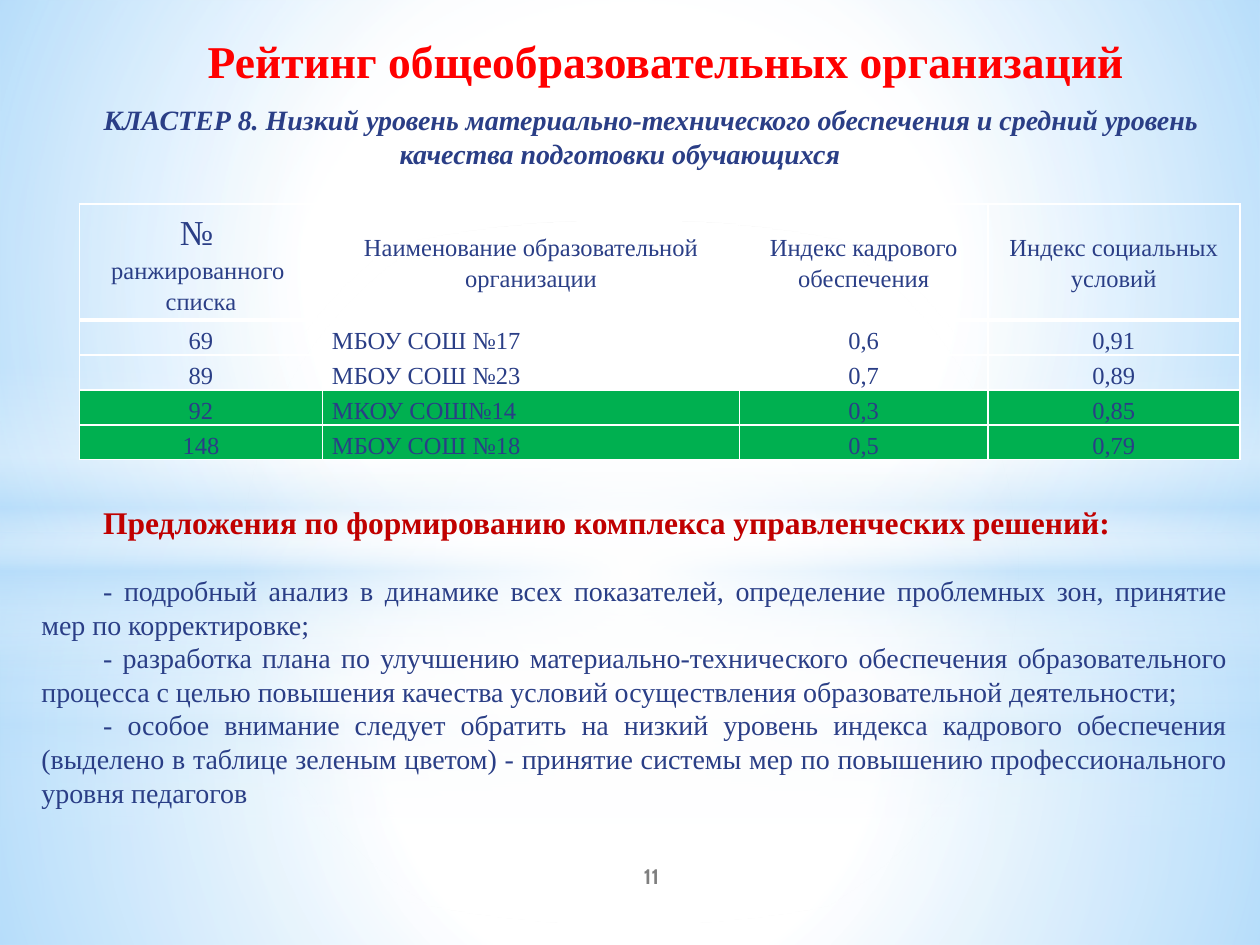
import pptx
import pptx.dml.color
import pptx.enum.shapes
import pptx.enum.text
import pptx.oxml
import pptx.oxml.ns
import pptx.util

ALIGN = pptx.enum.text.PP_ALIGN
ANCHOR = pptx.enum.text.MSO_ANCHOR
SHAPE = pptx.enum.shapes.MSO_SHAPE
SLIDE_WIDTH = pptx.util.Inches(10)
SLIDE_HEIGHT = pptx.util.Inches(7.5)
SERIF = "Times New Roman"
NAVY, WHITE, SKY, GREEN = "2A3E86", "FFFFFF", "B4DCFA", "00B050"
COLUMN_SHARES = [19.3, 33.1, 19.7, 20]
ROW_SHARES = [12.13] + [3.7] * 4
HEADINGS = [
    ["№ ", "ранжированного ", "списка"],
    ["Наименование образовательной организации"],
    ["Индекс кадрового обеспечения"],
    ["Индекс социальных условий"],
]
SCHOOLS = [
    ("69", "МБОУ СОШ №17", "0,6", "0,91"),
    ("89", "МБОУ СОШ №23", "0,7", "0,89"),
    ("92", "МКОУ СОШ№14", "0,3", "0,85"),
    ("148", "МБОУ СОШ №18", "0,5", "0,79"),
]
HIGHLIGHTED = {"92", "148"}
PROPOSALS = [
    "- подробный анализ в динамике всех показателей, определение проблемных зон, "
    "принятие мер по корректировке;",
    "- разработка плана по улучшению материально-технического обеспечения "
    "образовательного процесса с целью повышения качества условий осуществления "
    "образовательной деятельности; ",
    "- особое внимание следует обратить на низкий уровень индекса кадрового "
    "обеспечения (выделено в таблице зеленым цветом) - принятие системы мер по "
    "повышению профессионального уровня педагогов",
]


def color(value):
    return pptx.dml.color.RGBColor.from_string(value)


def across(share):
    return round(SLIDE_WIDTH * share / 100)


def down(share):
    return round(SLIDE_HEIGHT * share / 100)


def area(left, top, width, height):
    return across(left), down(top), across(width), down(height)


def drawing_xml(body):
    tag, rest = body[1:].split(" ", 1)
    return pptx.oxml.parse_xml(f"<{tag} {pptx.oxml.ns.nsdecls('a')} {rest}")


def write(frame, text, size=16, font=SERIF, fill=NAVY, bold=False, italic=False,
          align=ALIGN.LEFT, indent=0, spacing=None, before=None):
    paragraph = frame.add_paragraph() if frame.text else frame.paragraphs[0]
    if indent:
        properties = paragraph._p.get_or_add_pPr()
        properties.set("marL", "0")
        properties.set("indent", str(across(indent)))
    paragraph.alignment = align
    paragraph.line_spacing = spacing
    paragraph.space_before = before
    run = paragraph.add_run()
    run.text = text
    run.font.size = pptx.util.Pt(size)
    run.font.name = font
    run.font.bold = bold
    run.font.italic = italic
    run.font.color.rgb = color(fill)


def add_text_box(slide, place, anchor=ANCHOR.MIDDLE, wrap=True):
    frame = slide.shapes.add_textbox(*place).text_frame
    frame.word_wrap = wrap
    frame.vertical_anchor = anchor
    return frame


def add_gradient(slide, preset, place, stops, direction):
    shape = slide.shapes.add_shape(preset, *place)
    stop_xml = "".join(
        f'<a:gs pos="{position * 1000}"><a:srgbClr val="{value}">'
        f'<a:alpha val="{opacity * 1000}"/></a:srgbClr></a:gs>'
        for position, value, opacity in stops)
    shape._element.spPr.append(drawing_xml(
        f'<a:gradFill rotWithShape="1"><a:gsLst>{stop_xml}</a:gsLst>{direction}</a:gradFill>'))
    shape.line.fill.background()
    shape.shadow.inherit = False


def add_backdrop(slide, split, band_top, glow_end, boost):
    radial = ('<a:path path="circle"><a:fillToRect l="50000" t="50000" '
              'r="50000" b="50000"/></a:path>')
    vertical = '<a:lin ang="5400000" scaled="0"/>'
    lower = [(0, WHITE, 91 + boost), (37, WHITE, 76 + boost), (100, SKY, 79 + boost)]
    upper = [(0, WHITE, 89 + boost), (48, WHITE, 62 + boost), (100, SKY, 79 + boost)]
    band = [(0, WHITE, 0), (29, WHITE, 30), (45, SKY, 40),
            (55, WHITE, 26), (65, SKY, 60), (100, WHITE, 0)]
    glow = [(0, WHITE, 100), (glow_end, WHITE, 0)]
    add_gradient(slide, SHAPE.RECTANGLE, area(0, split, 100, 100 - split), lower, radial)
    add_gradient(slide, SHAPE.RECTANGLE, area(0, 0, 100, split), upper, radial)
    add_gradient(slide, SHAPE.RECTANGLE, area(0, band_top, 100, 33.33), band, vertical)
    add_gradient(slide, SHAPE.OVAL, area(0, 23.33, 100, 74.4), glow, radial)


def set_borders(cell, top, bottom):
    for side, points in (("L", 1), ("R", 1), ("T", top), ("B", bottom)):
        cell._tc.get_or_add_tcPr().append(drawing_xml(
            f'<a:ln{side} w="{pptx.util.Pt(points)}"><a:solidFill>'
            f'<a:srgbClr val="{WHITE}"/></a:solidFill></a:ln{side}>'))


def fill_cell(cell, lines, sizes, align, anchor, top, bottom, fill):
    set_borders(cell, top, bottom)
    if fill:
        cell.fill.solid()
        cell.fill.fore_color.rgb = color(fill)
    else:
        cell.fill.background()
    cell.margin_left = cell.margin_right = across(0.75)
    cell.margin_top = cell.margin_bottom = 0
    cell.vertical_anchor = anchor
    for line, size in zip(lines, sizes):
        write(cell.text_frame, line, size=size, align=align, spacing=1.15)


def add_rating_table(slide):
    place = area(6.3, 21.6, sum(COLUMN_SHARES), sum(ROW_SHARES))
    table = slide.shapes.add_table(len(ROW_SHARES), len(COLUMN_SHARES), *place).table
    table.first_row = table.horz_banding = False
    for column, share in zip(table.columns, COLUMN_SHARES):
        column.width = across(share)
    for row, share in zip(table.rows, ROW_SHARES):
        row.height = down(share)
    for column, lines in enumerate(HEADINGS):
        sizes = [20, 14, 14] if column == 0 else [14]
        fill_cell(table.cell(0, column), lines, sizes, ALIGN.CENTER, ANCHOR.MIDDLE, 1, 3, None)
    for row, school in enumerate(SCHOOLS, start=1):
        fill = GREEN if school[0] in HIGHLIGHTED else None
        for column, value in enumerate(school):
            align = ALIGN.LEFT if column == 1 else ALIGN.CENTER
            fill_cell(table.cell(row, column), [value], [14], align, ANCHOR.BOTTOM,
                      3 if row == 1 else 1, 1, fill)


def add_proposals(slide):
    frame = add_text_box(slide, area(2.3, 52.53, 96.1, 34.13), ANCHOR.TOP)
    write(frame, "Предложения по формированию комплекса управленческих решений:",
          size=18, fill="C00000", bold=True, align=ALIGN.JUSTIFY, indent=4.9)
    for number, proposal in enumerate(PROPOSALS):
        write(frame, proposal, align=ALIGN.JUSTIFY, indent=4.9,
              before=pptx.util.Pt(0 if number else 19))


def main():
    presentation = pptx.Presentation()
    presentation.slide_width = SLIDE_WIDTH
    presentation.slide_height = SLIDE_HEIGHT
    slide = presentation.slides.add_slide(presentation.slide_layouts[6])
    add_backdrop(slide, split=74.4, band_top=54.93, glow_end=56, boost=0)
    add_backdrop(slide, split=56.4, band_top=38.67, glow_end=54, boost=1)
    write(add_text_box(slide, area(41.7, 90, 20, 5.33)), "11",
          size=12, font="Cabin", fill="7F7F7F", bold=True, align=ALIGN.CENTER)
    add_rating_table(slide)
    write(add_text_box(slide, area(0, 10.13, 98.4, 8.53)),
          "КЛАСТЕР 8. Низкий уровень материально-технического обеспечения "
          "и средний уровень качества подготовки обучающихся",
          bold=True, italic=True, align=ALIGN.CENTER, indent=4.9)
    add_proposals(slide)
    write(add_text_box(slide, area(10.6, 2.8, 80.4, 7.2), wrap=False),
          "Рейтинг общеобразовательных организаций",
          size=26, fill="FF0000", bold=True, indent=4.9)
    presentation.save("out.pptx")


if __name__ == "__main__":
    main()
